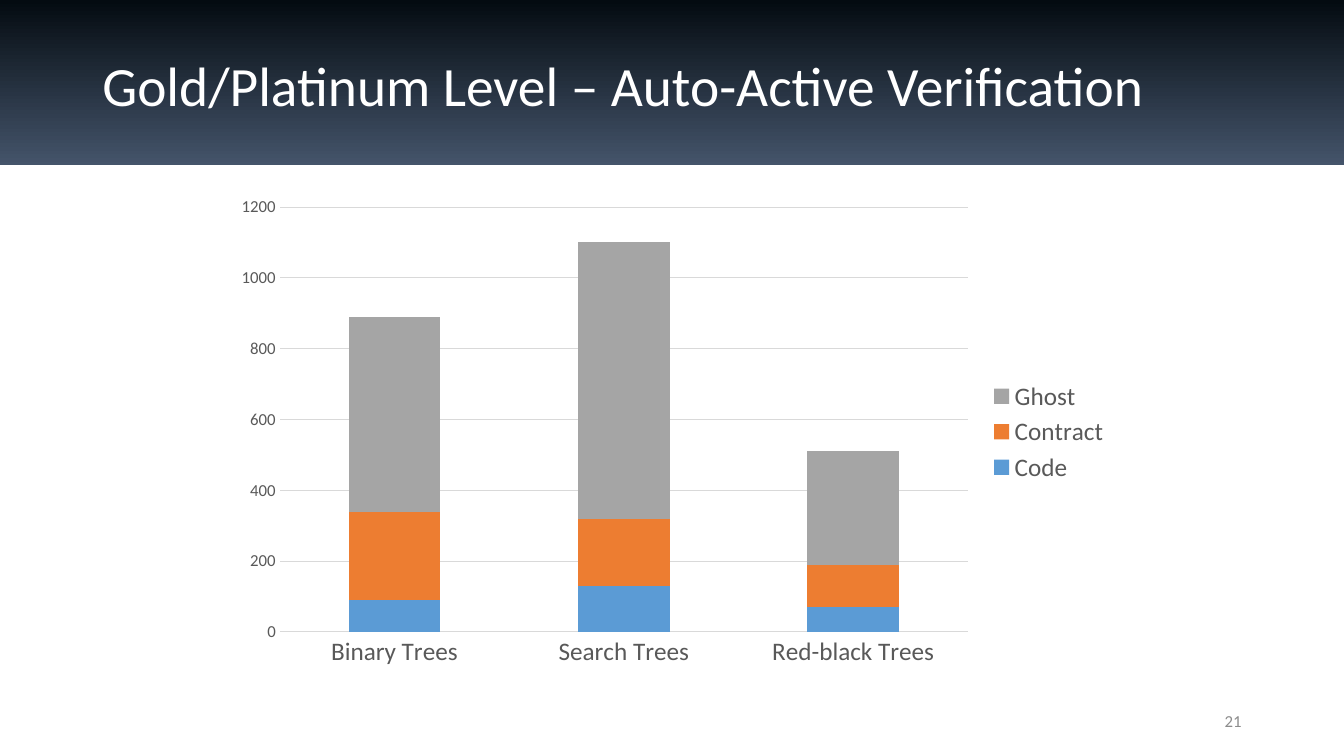
from pptx import Presentation
from pptx.chart.data import CategoryChartData
from pptx.dml.color import RGBColor
from pptx.enum.chart import XL_CHART_TYPE, XL_LEGEND_POSITION, XL_TICK_MARK
from pptx.enum.shapes import MSO_SHAPE
from pptx.enum.text import MSO_ANCHOR, PP_ALIGN
from pptx.util import Cm, Pt

STACK = XL_CHART_TYPE.COLUMN_STACKED
RIGHT = XL_LEGEND_POSITION.RIGHT
NO_TICK = XL_TICK_MARK.NONE
RECT = MSO_SHAPE.RECTANGLE
MIDDLE = MSO_ANCHOR.MIDDLE

FONT = "Calibri"
TITLE = "Gold/Platinum Level – Auto-Active Verification"
PAGE = "21"
TREES = ["Binary Trees", "Search Trees", "Red-black Trees"]
LINES = [
    ("Code", "5B9BD5", (90, 130, 70)),
    ("Contract", "ED7D31", (250, 190, 120)),
    ("Ghost", "A5A5A5", (550, 780, 320)),
]
BAND = ("040B11", "44546A")
GREY, RULE = "595959", "D9D9D9"
WIDE, HIGH = 33.87, 19.05


def rgb(code):
    return RGBColor.from_string(code)


def style(font, size, code):
    font.name = FONT
    font.size = Pt(size)
    font.color.rgb = rgb(code)


def rule(line):
    line.color.rgb = rgb(RULE)
    line.width = Pt(0.75)


def add_text(slide, box, text, size, code, align, space=1.0):
    frame = slide.shapes.add_textbox(*map(Cm, box)).text_frame
    frame.word_wrap = True
    frame.vertical_anchor = MIDDLE
    para = frame.paragraphs[0]
    para.alignment = align
    para.line_spacing = space
    run = para.add_run()
    run.text = text
    style(run.font, size, code)


def add_band(slide):
    band = slide.shapes.add_shape(RECT, 0, 0, Cm(WIDE), Cm(4.17))
    band.shadow.inherit = False
    band.line.fill.background()
    band.fill.gradient()
    band.fill.gradient_angle = 270
    for stop, code, pos in zip(band.fill.gradient_stops, BAND, (0, 1)):
        stop.color.rgb = rgb(code)
        stop.position = pos


def add_bars(slide, box):
    data = CategoryChartData()
    data.categories = TREES
    for name, _, vals in LINES:
        data.add_series(name, vals)
    chart = slide.shapes.add_chart(STACK, *map(Cm, box), data).chart
    chart.has_title = False
    style(chart.font, 10, "000000")

    plot = chart.plots[0]
    plot.gap_width = 150
    plot.overlap = 100
    plot.vary_by_categories = False
    for bar, (_, code, _) in zip(plot.series, LINES):
        bar.format.fill.solid()
        bar.format.fill.fore_color.rgb = rgb(code)

    cats, vals = chart.category_axis, chart.value_axis
    for axis, size in ((cats, 18), (vals, 12)):
        axis.major_tick_mark = axis.minor_tick_mark = NO_TICK
        style(axis.tick_labels.font, size, GREY)
    rule(cats.format.line)
    vals.format.line.fill.background()
    vals.has_major_gridlines = True
    rule(vals.major_gridlines.format.line)

    chart.has_legend = True
    chart.legend.position = RIGHT
    chart.legend.include_in_layout = False
    style(chart.legend.font, 18, GREY)


def main():
    deck = Presentation()
    deck.slide_width, deck.slide_height = Cm(WIDE), Cm(HIGH)
    slide = deck.slides.add_slide(deck.slide_layouts[6])
    add_band(slide)
    add_text(slide, (2.33, 1.01, 29.21, 2.46), TITLE, 39.6, "FFFFFF",
             PP_ALIGN.LEFT, 0.9)
    add_text(slide, (23.92, 17.66, 7.62, 1.01), PAGE, 12, "8C8C8C",
             PP_ALIGN.RIGHT)
    add_bars(slide, (5.64, 4.72, 22.58, 12.32))
    deck.save("out.pptx")


if __name__ == "__main__":
    main()
